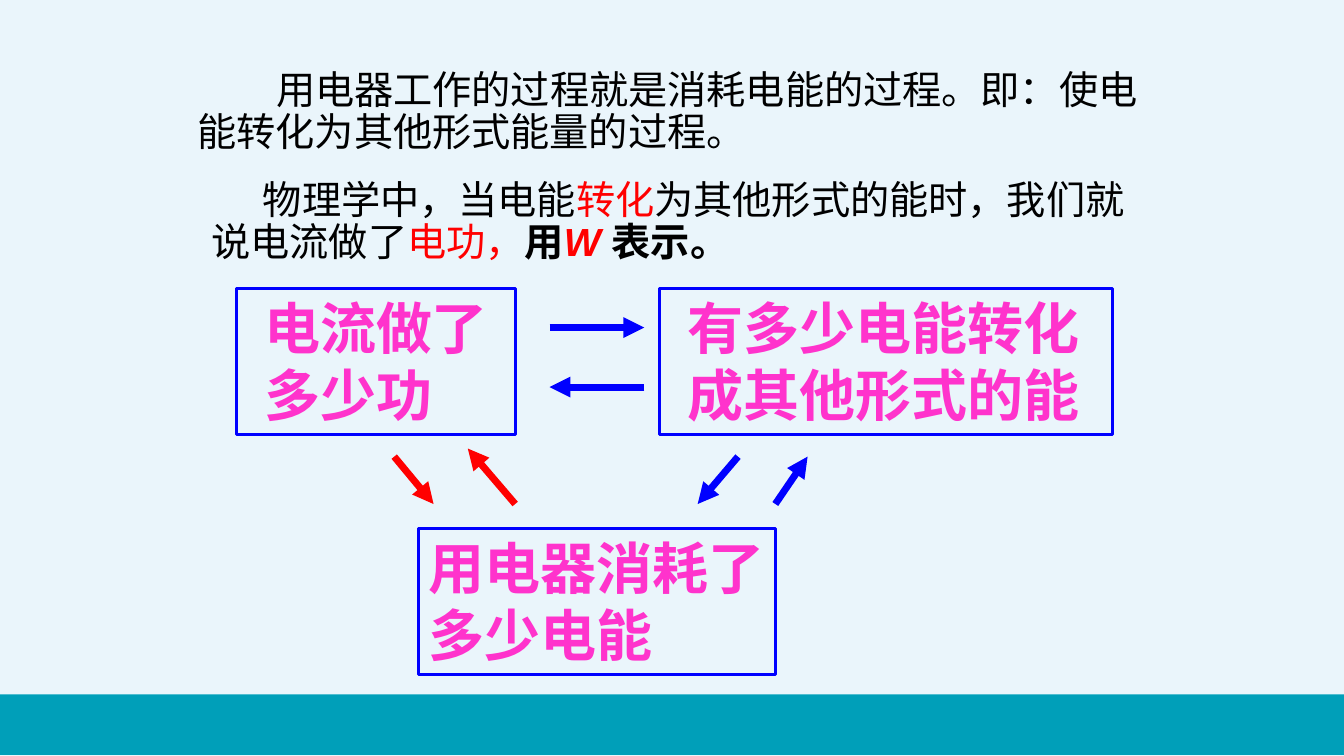
from lxml import etree
from pptx import Presentation
from pptx.dml.color import RGBColor
from pptx.enum.shapes import MSO_CONNECTOR, MSO_SHAPE
from pptx.enum.text import MSO_ANCHOR, PP_ALIGN
from pptx.oxml.ns import qn
from pptx.util import Inches, Pt

STRAIGHT = MSO_CONNECTOR.STRAIGHT
RECTANGLE = MSO_SHAPE.RECTANGLE
TOP = MSO_ANCHOR.TOP
LEFT = PP_ALIGN.LEFT

PALE = RGBColor(0xEA, 0xF5, 0xFB)
TEAL = RGBColor(0x00, 0x9F, 0xB9)
BLACK = RGBColor(0x00, 0x00, 0x00)
RED = RGBColor(0xFF, 0x00, 0x00)
BLUE = RGBColor(0x00, 0x00, 0xFF)
PINK = RGBColor(0xFF, 0x33, 0xCC)

PLAIN = {"size": Pt(28), "name": "Arial", "bold": False}
STRONG = {**PLAIN, "bold": True}
SYMBOL = {**STRONG, "italic": True}
LABEL = {"size": Pt(40), "name": "Arial", "bold": True}

BOX_TOP, BOX_HEIGHT = 2.86, 1.45

INTRO = [("用电器工作的过程就是消耗电能的过程。即：使电能转化为其他形式能量的过程。", PLAIN, BLACK)]
DEFINITION = [
    ("物理学中，当电能", PLAIN, BLACK),
    ("转化", PLAIN, RED),
    ("为其他形式的能时，我们就说电流做了", PLAIN, BLACK),
    ("电功，", PLAIN, RED),
    ("用", STRONG, BLACK),
    ("W ", SYMBOL, RED),
    ("表示。", STRONG, BLACK),
]
BOXES = [
    ("用电器消耗了多少电能", 4.15, 5.24, 3.54, 0.1),
    ("电流做了多少功", 2.35, BOX_TOP, 2.76, 0.27),
    ("有多少电能转化成其他形式的能", 6.54, BOX_TOP, 4.49, 0.28),
]
ARROWS = [
    ((5.45, 3.25), (6.39, 3.25), BLUE),
    ((6.39, 3.84), (5.45, 3.84), BLUE),
    ((3.91, 4.53), (4.3, 5), RED),
    ((5.11, 5), (4.64, 4.45), RED),
    ((7.32, 4.53), (6.92, 5), BLUE),
    ((7.69, 5), (8.01, 4.53), BLUE),
]


def add_run(p, text, fmt, color):
    r = p.add_run()
    r.text = text
    for key, value in fmt.items():
        setattr(r.font, key, value)
    r.font.color.rgb = color


def add_paragraph_box(s, runs, left, top, width, height, indent):
    tf = s.shapes.add_textbox(*map(Inches, (left, top, width, height))).text_frame
    tf.word_wrap = True
    p = tf.paragraphs[0]
    p.line_spacing = 0.9
    p._p.get_or_add_pPr().set("indent", str(Inches(indent)))
    for run in runs:
        add_run(p, *run)


def add_bar(s):
    sp = s.shapes.add_shape(RECTANGLE, 0, Inches(6.89), Inches(13.33), Inches(0.6))
    sp.shadow.inherit = False
    sp.fill.solid()
    sp.fill.fore_color.rgb = TEAL
    sp.line.fill.background()


def add_label_box(s, text, left, top, width, margin):
    sp = s.shapes.add_shape(RECTANGLE, *map(Inches, (left, top, width, BOX_HEIGHT)))
    sp.shadow.inherit = False
    sp.fill.background()
    sp.line.color.rgb = BLUE
    sp.line.width = Pt(2)
    tf = sp.text_frame
    tf.word_wrap = True
    tf.vertical_anchor = TOP
    tf.margin_left = Inches(margin)
    p = tf.paragraphs[0]
    p.alignment = LEFT
    add_run(p, text, LABEL, PINK)


def add_arrow(s, start, end, color):
    line = s.shapes.add_connector(STRAIGHT, *map(Inches, start + end))
    line.line.color.rgb = color
    line.line.width = Pt(5)
    ln = line.line._get_or_add_ln()
    etree.SubElement(ln, qn("a:tailEnd")).set("type", "triangle")
    etree.SubElement(line._element.spPr, qn("a:effectLst"))


def main():
    prs = Presentation()
    prs.slide_width, prs.slide_height = Inches(13.33), Inches(7.5)
    s = prs.slides.add_slide(prs.slide_layouts[6])
    s.background.fill.solid()
    s.background.fill.fore_color.rgb = PALE
    add_bar(s)
    add_paragraph_box(s, INTRO, 1.86, 0.65, 9.9, 1.23, 0.78)
    add_paragraph_box(s, DEFINITION, 2, 1.74, 9.33, 0.94, 0.51)
    for box in BOXES:
        add_label_box(s, *box)
    for arrow in ARROWS:
        add_arrow(s, *arrow)
    prs.save("out.pptx")


if __name__ == "__main__":
    main()
